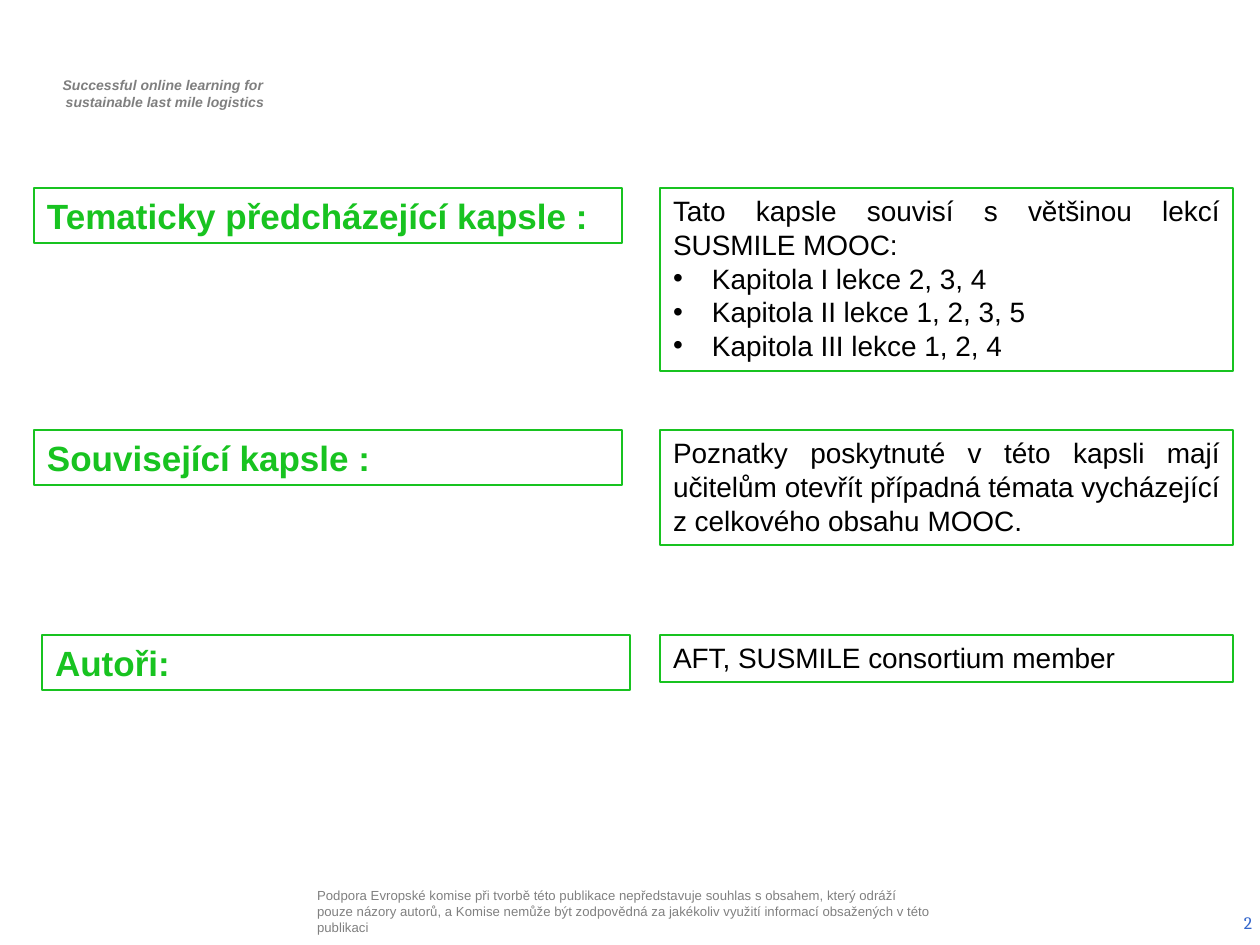
import pptx
import pptx.util
import pptx.dml.color
import pptx.enum.shapes
import pptx.enum.text
import lxml.etree

PX = 914400 / 126
GREEN, BLACK = "18C320", "000000"
ALIGN = pptx.enum.text.PP_ALIGN
MIDDLE = pptx.enum.text.MSO_ANCHOR.MIDDLE
HEADING = dict(size=20, name="Arial", color=GREEN, bold=True)
BODY = dict(size=16, name="Arial", color=BLACK)


def px(n):
    return pptx.util.Emu(round(n * PX))


def rgb(color):
    return pptx.dml.color.RGBColor.from_string(color)


def add_bullet(p):
    """Give the paragraph a hanging black bullet."""
    pPr = p._p.get_or_add_pPr()
    pPr.set("marL", str(px(39)))
    pPr.set("indent", str(-px(39)))
    ns = pptx.oxml.ns.qn
    color = lxml.etree.SubElement(pPr, ns("a:buClr"))
    lxml.etree.SubElement(color, ns("a:srgbClr")).set("val", BLACK)
    lxml.etree.SubElement(pPr, ns("a:buFont")).set("typeface", "Arial")
    lxml.etree.SubElement(pPr, ns("a:buChar")).set("char", "•")


def write(sp, lines, fmt, align=ALIGN.LEFT, anchor=None, margins=(13, 6), bullets_from=None):
    tf = sp.text_frame
    tf.word_wrap = True
    tf.vertical_anchor = anchor or pptx.enum.text.MSO_ANCHOR.TOP
    tf.margin_left = tf.margin_right = px(margins[0])
    tf.margin_top = tf.margin_bottom = px(margins[1])
    for i, line in enumerate(lines):
        p = tf.add_paragraph() if i else tf.paragraphs[0]
        p.alignment = align
        if bullets_from is not None and i >= bullets_from:
            add_bullet(p)
        r = p.add_run()
        r.text = line
        for key, value in fmt.items():
            if key == "color":
                r.font.color.rgb = rgb(value)
            else:
                setattr(r.font, key, pptx.util.Pt(value) if key == "size" else value)


def text_box(s, box, lines, fmt, **layout):
    write(s.shapes.add_textbox(*map(px, box)), lines, fmt, **layout)


def framed_box(s, box, lines, fmt, **layout):
    sp = s.shapes.add_shape(pptx.enum.shapes.MSO_SHAPE.RECTANGLE, *map(px, box))
    sp.shadow.inherit = False
    sp.fill.solid()
    sp.fill.fore_color.rgb = rgb("FFFFFF")
    sp.line.color.rgb = rgb(GREEN)
    sp.line.width = pptx.util.Pt(0.75)
    write(sp, lines, fmt, **layout)


def topic_row(s, box, heading, lines, indent=0, **layout):
    """Place a heading frame at the left and its text frame at the right of box."""
    x, y, w, h = box
    text_w = 573
    framed_box(s, (x + indent, y, 588, 55), [heading], HEADING)
    framed_box(s, (x + w - text_w, y, text_w, h), lines, BODY, **layout)


def header(s, box):
    fmt = dict(size=8, name="Arial", color="7F7F7F", bold=True, italic=True)
    lines = ["Successful online learning for ", "sustainable last mile logistics"]
    text_box(s, box, lines, fmt, align=ALIGN.CENTER)


def footer(s, box):
    x, y, w, h = box
    notice = ("Podpora Evropské komise při tvorbě této publikace nepředstavuje souhlas "
              "s obsahem, který odráží pouze názory autorů, a Komise nemůže být zodpovědná "
              "za jakékoliv využití informací obsažených v této publikaci")
    text_box(s, (x, y, 625, h), [notice], dict(size=7.5, name="Arial", color="808080"),
             anchor=MIDDLE, margins=(5, 5))
    number_w = 294
    text_box(s, (x + w - number_w, y + 18, number_w, 50), ["2"],
             dict(size=10, name="Cambria", color="3366CC"), align=ALIGN.RIGHT, anchor=MIDDLE)


def main():
    prs = pptx.Presentation()
    prs.slide_width, prs.slide_height = px(1260), px(945)
    s = prs.slides.add_slide(prs.slide_layouts[6])
    header(s, (37, 71, 256, 47))
    footer(s, (312, 880, 953, 63))
    topic_row(s, (34, 188, 1199, 183), "Tematicky předcházející kapsle :",
              ["Tato kapsle souvisí s většinou lekcí SUSMILE MOOC:",
               "Kapitola I lekce 2, 3, 4",
               "Kapitola II lekce 1, 2, 3, 5",
               "Kapitola III lekce 1, 2, 4"],
              align=ALIGN.JUSTIFY, bullets_from=1)
    topic_row(s, (34, 430, 1199, 115), "Související kapsle :",
              ["Poznatky poskytnuté v této kapsli mají učitelům otevřít případná témata "
               "vycházející z celkového obsahu MOOC."], align=ALIGN.JUSTIFY)
    topic_row(s, (34, 635, 1199, 47), "Autoři:", ["AFT, SUSMILE consortium member"], indent=8)
    prs.save("out.pptx")


if __name__ == "__main__":
    main()
